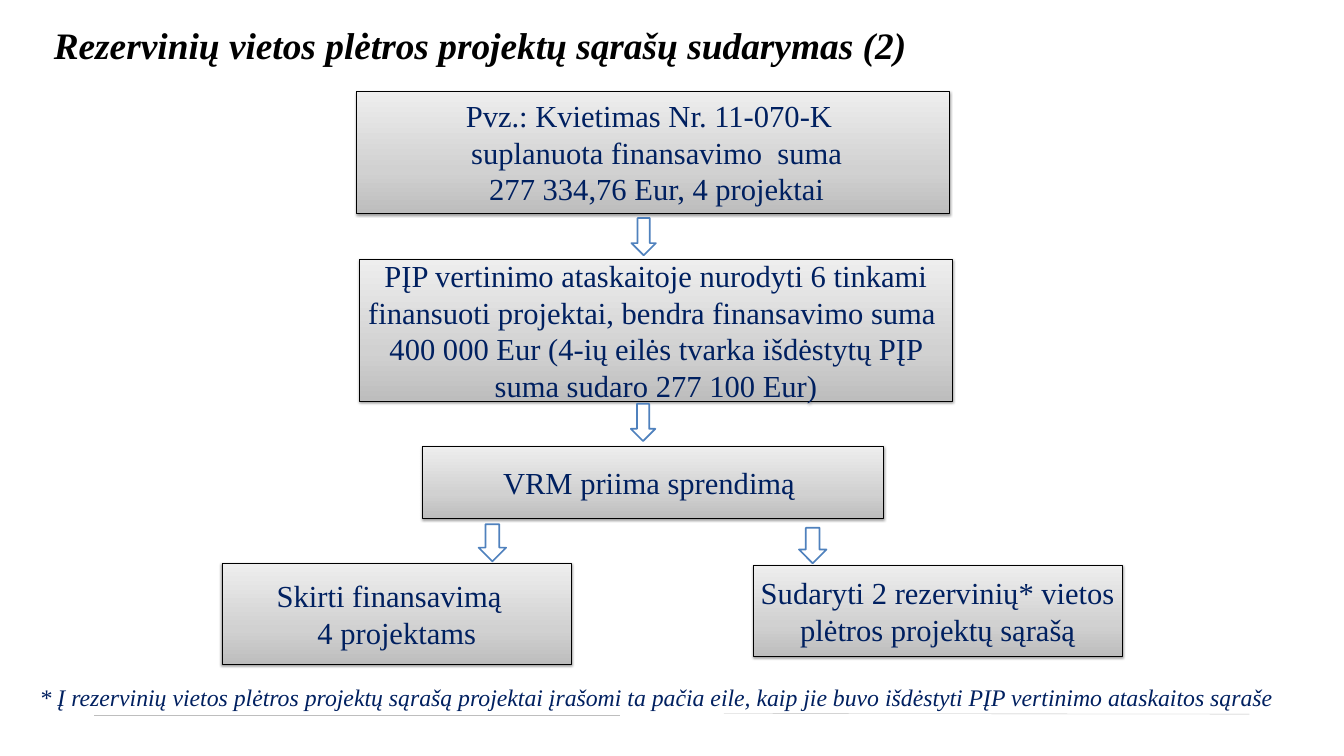
from dataclasses import dataclass
from copy import deepcopy
from lxml.etree import SubElement
from pptx import Presentation
from pptx.dml.color import RGBColor
from pptx.enum.shapes import MSO_CONNECTOR, MSO_SHAPE
from pptx.enum.text import MSO_ANCHOR, PP_ALIGN
from pptx.oxml.ns import qn
from pptx.util import Inches, Pt


@dataclass(frozen=True)
class Theme:
    """Colours, type sizes and font of the slide."""
    font: str = "Times New Roman"
    black: str = "000000"
    navy: str = "002060"
    blue: str = "4F81BD"
    white: str = "FFFFFF"
    rule: str = "BEBEBE"
    grade: tuple = ((0, "BDBDBD"), (0.35, "D1D1D1"), (1, "EEEEEE"))
    head: int = 44
    body: int = 36
    note: int = 28


THEME = Theme()


def tint(color):
    """Turn a hex value into a colour."""
    return RGBColor.from_string(color)


def write(frame, lines, size, color, align=PP_ALIGN.LEFT, bold=False, italic=False):
    """Fill a text frame with one paragraph per line."""
    frame.word_wrap = True
    for i, line in enumerate(lines):
        para = frame.paragraphs[0] if i == 0 else frame.add_paragraph()
        para.alignment = align
        run = para.add_run()
        run.text = line
        font = run.font
        font.name, font.size = THEME.font, Pt(size)
        font.bold, font.italic = bold, italic
        font.color.rgb = tint(color)


def shade(shape):
    """Give a shape the grey gradient and a soft shadow below it."""
    fill = shape.fill
    fill.gradient()
    fill.gradient_angle = 90
    first = fill.gradient_stops[0]._gs
    first.addnext(deepcopy(first))
    for stop, (place, color) in zip(fill.gradient_stops, THEME.grade):
        stop.position = place
        stop.color.rgb = tint(color)
    shape.shadow.inherit = False
    effect = shape._element.spPr.find(qn("a:effectLst"))
    outer = SubElement(effect, qn("a:outerShdw"), blurRad=str(Pt(3.1)),
                       dist=str(Pt(1.6)), dir="5400000", rotWithShape="0")
    color = SubElement(outer, qn("a:srgbClr"), val=THEME.black)
    SubElement(color, qn("a:alpha"), val="38000")


def draw_rule(slide, box):
    """Draw a thin grey line across a box."""
    x, y, w, h = map(Inches, box)
    line = slide.shapes.add_connector(MSO_CONNECTOR.STRAIGHT, x, y, x + w, y + h)
    line.line.color.rgb = tint(THEME.rule)
    line.line.width = Pt(0.4)
    SubElement(line._element.spPr, qn("a:effectLst"))


def draw_title(slide, box):
    """Place the title in its box."""
    title = slide.shapes.title
    title.left, title.top, title.width, title.height = map(Inches, box)
    frame = title.text_frame
    frame.margin_left = frame.margin_right = 0
    frame.margin_top = frame.margin_bottom = 0
    frame.vertical_anchor = MSO_ANCHOR.TOP
    write(frame, ["Rezervinių vietos plėtros projektų sąrašų sudarymas (2)"],
          THEME.head, THEME.black, bold=True, italic=True)


def draw_step(slide, box, lines):
    """Draw one shaded step of the flow."""
    step = slide.shapes.add_shape(MSO_SHAPE.RECTANGLE, *map(Inches, box))
    shade(step)
    step.line.color.rgb = tint(THEME.black)
    step.line.width = Pt(0.75)
    step.text_frame.vertical_anchor = MSO_ANCHOR.MIDDLE
    write(step.text_frame, lines, THEME.body, THEME.navy, PP_ALIGN.CENTER)


def draw_arrow(slide, box):
    """Draw a hollow arrow pointing down."""
    arrow = slide.shapes.add_shape(MSO_SHAPE.DOWN_ARROW, *map(Inches, box))
    arrow.shadow.inherit = False
    arrow.fill.solid()
    arrow.fill.fore_color.rgb = tint(THEME.white)
    arrow.line.color.rgb = tint(THEME.blue)
    arrow.line.width = Pt(2)


def draw_flow(slide, box):
    """Draw the steps and arrows relative to the box."""
    left, top, width, height = box
    steps = [
        ((2.2, 0, 9.7, 2), ["Pvz.: Kvietimas Nr. 11-070-K ",
                            " suplanuota finansavimo  suma",
                            " 277 334,76 Eur, 4 projektai"]),
        ((2.25, 2.75, 9.7, 2.33),
         ["PĮP vertinimo ataskaitoje nurodyti 6 tinkami finansuoti projektai, "
          "bendra finansavimo suma ",
          "400 000 Eur (4-ių eilės tvarka išdėstytų PĮP suma sudaro 277 100 Eur)"]),
        ((3.28, 5.81, 7.54, 1.19), ["VRM priima sprendimą "]),
        ((0, height - 1.66, 5.72, 1.66), ["Skirti finansavimą  ", "4 projektams"]),
        ((width - 6.04, 7.76, 6.04, 1.49),
         ["Sudaryti 2 rezervinių* vietos plėtros projektų sąrašą"]),
    ]
    arrows = [(6.7, 2.08, 0.4, 0.61), (6.69, 5.12, 0.4, 0.61),
              (4.2, 7.09, 0.45, 0.61), (9.44, 7.15, 0.45, 0.58)]
    for (x, y, w, h), lines in steps:
        draw_step(slide, (left + x, top + y, w, h), lines)
    for x, y, w, h in arrows:
        draw_arrow(slide, (left + x, top + y, w, h))


def draw_note(slide, box):
    """Write the footnote in its box."""
    note = slide.shapes.add_textbox(*map(Inches, box))
    write(note.text_frame,
          ["* Į rezervinių vietos plėtros projektų sąrašą projektai įrašomi ta pačia eile, "
           "kaip jie buvo išdėstyti PĮP vertinimo ataskaitos sąraše"],
          THEME.note, THEME.navy, italic=True)


def main():
    """Build and save the slide."""
    deck = Presentation()
    deck.slide_width = Pt(1583)
    deck.slide_height = Pt(891)
    slide = deck.slides.add_slide(deck.slide_layouts[5])
    draw_rule(slide, (1.54, 11.7, 8.6, 0))
    draw_rule(slide, (11.84, 11.68, 8.6, 0.01))
    draw_title(slide, (0.88, 0.37, 18.5, 0.74))
    draw_flow(slide, (3.63, 1.49, 14.73, 9.39))
    draw_note(slide, (0.55, 11.13, 20.89, 0.57))
    deck.save("out.pptx")


if __name__ == "__main__":
    main()
